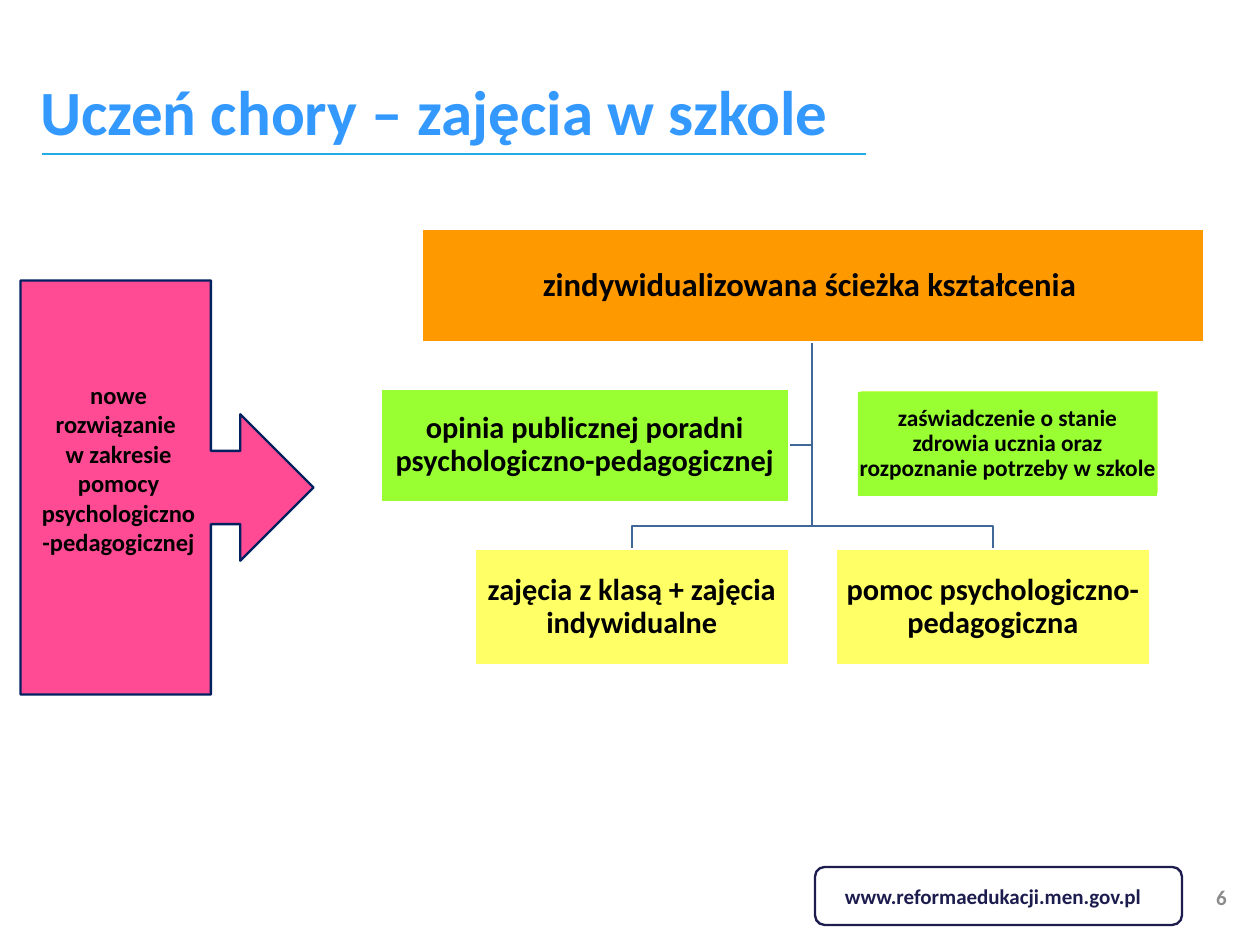
"""Build the slide on school classes for a pupil with an illness."""
from dataclasses import dataclass
from typing import Optional

from lxml.etree import SubElement
from pptx import Presentation
from pptx.dml.color import RGBColor as Rgb
from pptx.enum.shapes import MSO_CONNECTOR as Connector, MSO_SHAPE as Shape
from pptx.enum.text import MSO_ANCHOR as Anchor, PP_ALIGN as Align
from pptx.oxml.ns import qn
from pptx.util import Emu, Pt


@dataclass(frozen=True)
class Theme:
    font: str = "Calibri"
    title: str = "3399FF"
    rule: str = "25AAE1"
    navy: str = "1C1C4E"
    arrow_fill: str = "FF4B94"
    arrow_edge: str = "002060"
    branch: str = "3F6797"
    orange: str = "FF9900"
    green: str = "99FF33"
    lime: str = "CCFF66"
    yellow: str = "FFFF66"
    white: str = "FFFFFF"
    black: str = "000000"
    grey: str = "8C8C8C"
    title_size: int = 54
    path_size: int = 28
    box_size: int = 26
    arrow_size: int = 21
    note_size: int = 20
    footer_size: int = 18
    rule_width: float = 2.25
    edge_width: int = 2


@dataclass(frozen=True)
class Area:
    left: int
    top: int
    width: int
    height: int


@dataclass(frozen=True)
class Label:
    lines: tuple[str, ...]
    size: int
    color: str
    align: Align = Align.CENTER
    anchor: Anchor = Anchor.MIDDLE
    inset: tuple[int, int] = (8, 4)
    spacing: float = 1.0


@dataclass(frozen=True)
class Block:
    area: Area
    kind: Shape
    fill: Optional[str] = None
    edge: Optional[str] = None
    label: Optional[Label] = None
    rotation: int = 0


THEME = Theme()
SCALE = 914400 / 84


def px(length: int) -> Emu:
    """Turn pixels into EMU."""
    return Emu(round(length * SCALE))


def place(area: Area) -> tuple[Emu, ...]:
    """Give the position and size of an area in EMU."""
    return tuple(map(px, (area.left, area.top, area.width, area.height)))


def apply(target: object, values: dict) -> None:
    """Set every named attribute on the target."""
    for name, value in values.items():
        setattr(target, name, value)


def write(frame, label: Label) -> None:
    """Write a label into a text frame."""
    side, end = map(px, label.inset)
    apply(frame, {"word_wrap": True, "vertical_anchor": label.anchor,
                  "margin_left": side, "margin_right": side,
                  "margin_top": end, "margin_bottom": end})
    for index, line in enumerate(label.lines):
        para = frame.add_paragraph() if index else frame.paragraphs[0]
        apply(para, {"alignment": label.align, "line_spacing": label.spacing})
        span = para.add_run()
        span.text = line
        apply(span.font, {"name": THEME.font, "size": Pt(label.size), "bold": True})
        span.font.color.rgb = Rgb.from_string(label.color)


def stroke(line, color: str, width: float = THEME.edge_width) -> None:
    """Colour a line and set its width."""
    line.color.rgb = Rgb.from_string(color)
    line.width = Pt(width)


def draw_text(page, area: Area, label: Label) -> None:
    """Draw a text box."""
    write(page.shapes.add_textbox(*place(area)).text_frame, label)


def draw_block(page, block: Block) -> None:
    """Draw a preset shape with its optional fill, edge and label."""
    box = page.shapes.add_shape(block.kind, *place(block.area))
    apply(box, {"rotation": block.rotation})
    box.shadow.inherit = False
    if block.fill:
        box.fill.solid()
        box.fill.fore_color.rgb = Rgb.from_string(block.fill)
    else:
        box.fill.background()
    if block.edge:
        stroke(box.line, block.edge)
    else:
        box.line.fill.background()
    if block.label:
        write(box.text_frame, block.label)


def draw_branch(page, points: tuple[tuple[int, int], ...]) -> None:
    """Draw an open angular line through the points."""
    builder = page.shapes.build_freeform(*points[0], scale=SCALE)
    builder.add_line_segments(points[1:], close=False)
    branch = builder.convert_to_shape()
    branch.shadow.inherit = False
    branch.fill.background()
    stroke(branch.line, THEME.branch)


def draw_rule(page, left: int, right: int, level: int) -> None:
    """Draw the horizontal rule below the title."""
    rule = page.shapes.add_connector(
        Connector.STRAIGHT, px(left), px(level), px(right), px(level))
    stroke(rule.line, THEME.rule, THEME.rule_width)
    SubElement(rule._element.spPr, qn("a:effectLst"))


def tile(area: Area, fill: str, text: str, size: int = THEME.box_size,
         edge: Optional[str] = THEME.white, inset: int = 2) -> Block:
    """Describe a labelled rectangle of the diagram."""
    label = Label((text,), size, THEME.black, inset=(inset, inset), spacing=0.9)
    return Block(area, Shape.RECTANGLE, fill, edge, label)


def main() -> None:
    """Build and save the deck."""
    deck = Presentation()
    apply(deck, {"slide_width": px(1260), "slide_height": px(945)})
    page = deck.slides.add_slide(deck.slide_layouts[6])

    draw_block(page, Block(Area(815, 867, 367, 58), Shape.ROUNDED_RECTANGLE,
                           edge=THEME.navy))
    draw_text(page, Area(837, 879, 319, 34),
              Label(("www.reformaedukacji.men.gov.pl",), THEME.footer_size,
                    THEME.navy, Align.LEFT))
    draw_text(page, Area(1183, 872, 77, 50),
              Label(("6",), THEME.footer_size, THEME.grey, inset=(13, 6)))
    draw_rule(page, 42, 866, 154)
    draw_text(page, Area(32, 69, 828, 85),
              Label(("Uczeń chory – zajęcia w szkole",), THEME.title_size,
                    THEME.title, Align.LEFT, Anchor.TOP))

    draw_block(page, Block(Area(-40, 341, 414, 293), Shape.UP_ARROW_CALLOUT,
                           THEME.arrow_fill, THEME.arrow_edge, rotation=90))
    draw_text(page, Area(32, 376, 173, 212),
              Label(("nowe rozwiązanie ",
                     "w zakresie pomocy psychologiczno-pedagogicznej"),
                    THEME.arrow_size, THEME.black, anchor=Anchor.TOP))

    trunk, start, fork, end = 812, 342, 526, 549
    draw_branch(page, ((trunk, start), (trunk, 445), (789, 445)))
    for tip in (993, 632):
        draw_branch(page, ((trunk, start), (trunk, fork), (tip, fork), (tip, end)))

    blocks = (
        tile(Area(422, 229, 782, 113), THEME.orange,
             "zindywidualizowana ścieżka kształcenia ", THEME.path_size),
        tile(Area(475, end, 314, 116), THEME.yellow,
             "zajęcia z klasą + zajęcia indywidualne"),
        tile(Area(836, end, 314, 116), THEME.yellow,
             "pomoc psychologiczno-pedagogiczna"),
        tile(Area(381, 389, 408, 113), THEME.green,
             "opinia publicznej poradni psychologiczno-pedagogicznej"),
        Block(Area(860, 390, 299, 104), Shape.RECTANGLE, THEME.lime, THEME.white),
        tile(Area(858, 392, 299, 104), THEME.green,
             "zaświadczenie o stanie zdrowia ucznia oraz rozpoznanie potrzeby w szkole",
             THEME.note_size, edge=None, inset=1),
    )
    for block in blocks:
        draw_block(page, block)
    deck.save("out.pptx")


if __name__ == "__main__":
    main()
